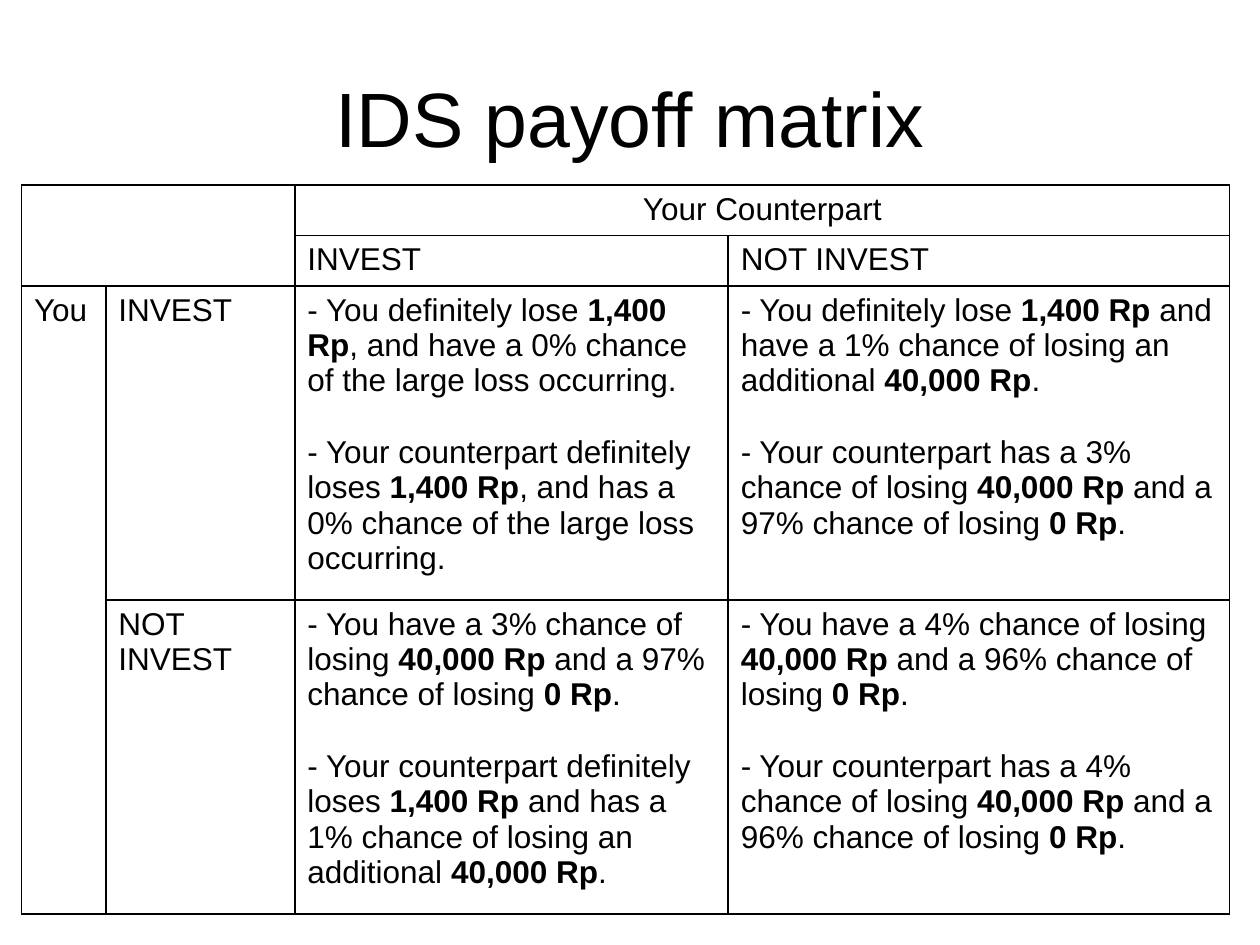
from dataclasses import dataclass

from lxml.etree import SubElement
from pptx import Presentation
from pptx.dml.color import RGBColor
from pptx.enum.text import MSO_ANCHOR, PP_ALIGN
from pptx.oxml.ns import qn
from pptx.util import Inches, Pt


@dataclass(frozen=True)
class Theme:
    font: str = "Arial"
    ink: str = "000000"
    title_size: int = 44
    body_size: int = 18
    paragraph_gap: int = 21
    border_width: int = 1
    hanging: float = 0.38


THEME = Theme()
TITLE = "IDS payoff matrix"
COLUMNS = [0.67, 1.5, 3.44, 3.98]
ROWS = [0.4, 0.4, 2.24, 2.24]
MERGES = [((0, 0), (1, 1)), ((0, 2), (0, 3)), ((2, 0), (3, 0))]
LABELS = {
    (0, 2): ["Your Counterpart"],
    (1, 2): ["INVEST"],
    (1, 3): ["NOT INVEST"],
    (2, 0): ["You"],
    (2, 1): ["INVEST"],
    (3, 1): ["NOT", "INVEST"],
}
PAYOFFS = {
    (2, 2): [
        "- You definitely lose *1,400 Rp*, and have a 0% chance of the large loss occurring.",
        "- Your counterpart definitely loses *1,400 Rp*, and has a 0% chance of the large loss occurring.",
    ],
    (2, 3): [
        "- You definitely lose *1,400 Rp* and have a 1% chance of losing an additional *40,000 Rp*.",
        "- Your counterpart has a 3% chance of losing *40,000 Rp* and a 97% chance of losing *0 Rp*.",
    ],
    (3, 2): [
        "- You have a 3% chance of losing *40,000 Rp* and a 97% chance of losing *0 Rp*.",
        "- Your counterpart definitely loses *1,400 Rp* and has a 1% chance of losing an additional *40,000 Rp*.",
    ],
    (3, 3): [
        "- You have a 4% chance of losing *40,000 Rp* and a 96% chance of losing *0 Rp*.",
        "- Your counterpart has a 4% chance of losing *40,000 Rp* and a 96% chance of losing *0 Rp*.",
    ],
}


def write(frame, lines, size, align=PP_ALIGN.LEFT, gap=0, hanging=0):
    for index, line in enumerate(lines):
        paragraph = frame.add_paragraph() if index else frame.paragraphs[0]
        paragraph.alignment = align
        if index and gap:
            paragraph.space_before = Pt(gap)
        if hanging:
            properties = paragraph._p.get_or_add_pPr()
            properties.set("marL", str(Inches(hanging)))
            properties.set("indent", str(-Inches(hanging)))
        for position, text in enumerate(line.split("*")):
            span = paragraph.add_run()
            span.text = text
            span.font.name = THEME.font
            span.font.size = Pt(size)
            span.font.bold = position % 2 == 1
            span.font.color.rgb = RGBColor.from_string(THEME.ink)


def style_cell(cell):
    properties = cell._tc.get_or_add_tcPr()
    for side in ("lnL", "lnR", "lnT", "lnB"):
        border = SubElement(properties, qn(f"a:{side}"), w=str(Pt(THEME.border_width)))
        fill = SubElement(border, qn("a:solidFill"))
        SubElement(fill, qn("a:srgbClr"), val=THEME.ink)
    cell.fill.background()


def add_title(slide):
    box = slide.shapes.add_textbox(Inches(0.5), Inches(0.3), Inches(9), Inches(1.25))
    frame = box.text_frame
    frame.word_wrap = True
    frame.vertical_anchor = MSO_ANCHOR.MIDDLE
    write(frame, [TITLE], THEME.title_size, PP_ALIGN.CENTER)


def add_matrix(slide):
    table = slide.shapes.add_table(
        len(ROWS), len(COLUMNS), Inches(0.17), Inches(1.47),
        Inches(sum(COLUMNS)), Inches(sum(ROWS)),
    ).table
    table.first_row = table.horz_banding = False
    for column, width in zip(table.columns, COLUMNS):
        column.width = Inches(width)
    for row, height in zip(table.rows, ROWS):
        row.height = Inches(height)
    for cell in table.iter_cells():
        style_cell(cell)
    for first, last in MERGES:
        table.cell(*first).merge(table.cell(*last))
    for place, lines in LABELS.items():
        align = PP_ALIGN.CENTER if place == (0, 2) else PP_ALIGN.LEFT
        write(table.cell(*place).text_frame, lines, THEME.body_size, align, hanging=THEME.hanging)
    for place, lines in PAYOFFS.items():
        write(table.cell(*place).text_frame, lines, THEME.body_size, gap=THEME.paragraph_gap)


def main():
    deck = Presentation()
    deck.slide_width, deck.slide_height = Inches(10), Inches(7.5)
    slide = deck.slides.add_slide(deck.slide_layouts[6])
    add_title(slide)
    add_matrix(slide)
    deck.save("out.pptx")


if __name__ == "__main__":
    main()
